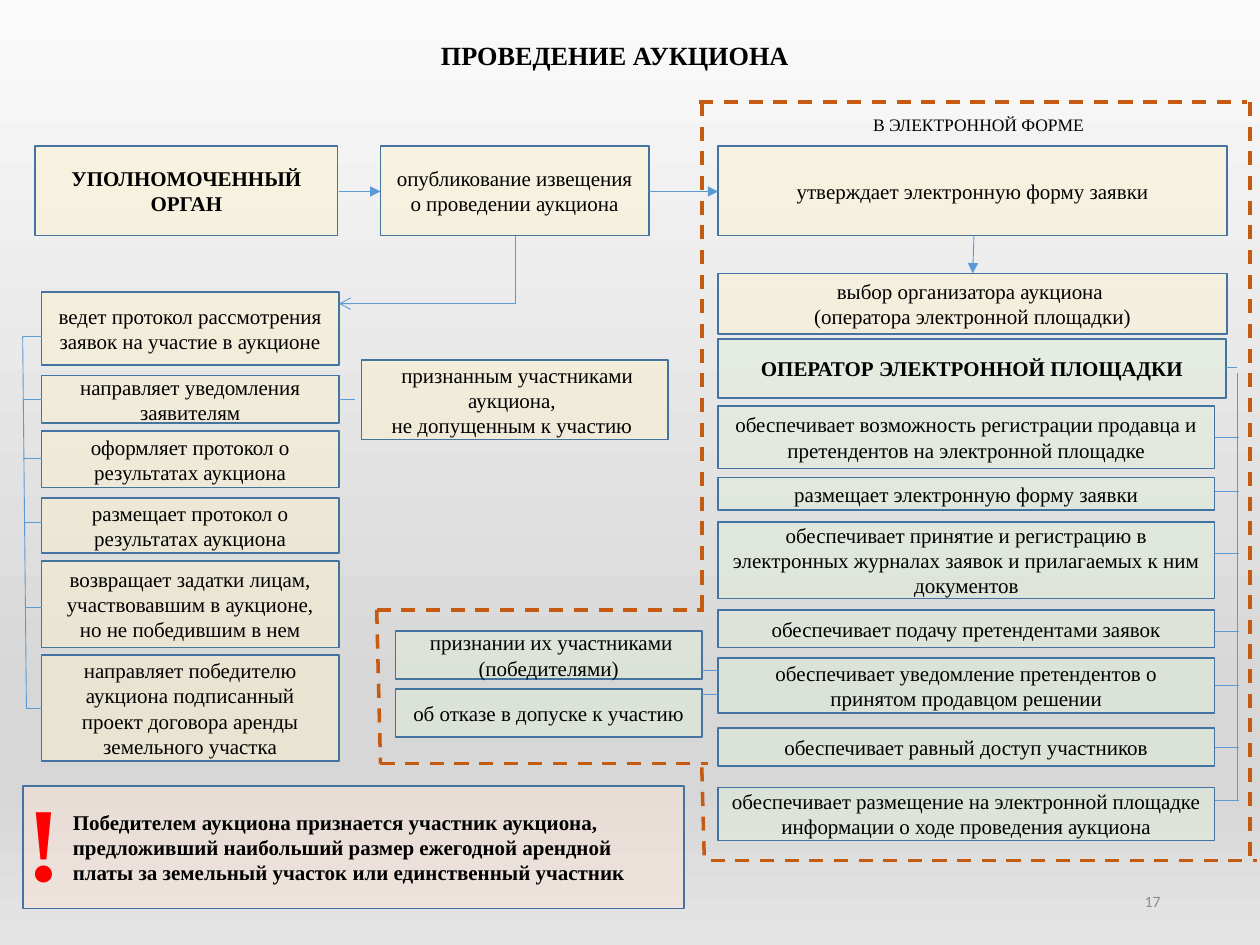
import pptx
import pptx.util
import pptx.dml.color
import pptx.enum.dml
import pptx.enum.shapes
import pptx.enum.text
import pptx.oxml.ns
import lxml.etree

RGB = pptx.dml.color.RGBColor
CREAM, GREEN, PEACH = RGB(0xFF, 0xF2, 0xCC), RGB(0xE2, 0xF0, 0xD9), RGB(0xFB, 0xE5, 0xD6)
BORDER, LINK, FRAME = RGB(0x43, 0x73, 0x9E), RGB(0x5B, 0x9B, 0xD5), RGB(0xC5, 0x5A, 0x11)
BLACK, GREY, RED = RGB(0, 0, 0), RGB(0x8C, 0x8C, 0x8C), RGB(0xFF, 0, 0)
BACKDROP = [(0, "FAFAFA"), (74, "D7D7D7"), (83, "D7D7D7"), (100, "E4E4E4")]
SERIF = "Times New Roman"
CENTER, LEFT, RIGHT = (pptx.enum.text.PP_ALIGN.CENTER, pptx.enum.text.PP_ALIGN.LEFT,
                       pptx.enum.text.PP_ALIGN.RIGHT)
MIDDLE, TOP = pptx.enum.text.MSO_ANCHOR.MIDDLE, pptx.enum.text.MSO_ANCHOR.TOP

AUTHORITY = (0.33, 2.36)
OPERATOR = (5.7, 3.94)
NOTICES = (3.14, 2.43)

HEADS = [
    ((0.28, 1.16, 2.4, 0.71), CREAM, True, "УПОЛНОМОЧЕННЫЙ ОРГАН"),
    ((3.02, 1.16, 2.13, 0.71), CREAM, False, "опубликование извещения о проведении аукциона"),
    ((5.7, 1.16, 4.04, 0.71), CREAM, False, "утверждает электронную форму заявки"),
    ((5.7, 2.17, 4.04, 0.48), CREAM, False,
     "выбор организатора аукциона \n(оператора электронной площадки)"),
    ((5.7, 2.69, 4.03, 0.47), GREEN, True, "ОПЕРАТОР ЭЛЕКТРОННОЙ ПЛОЩАДКИ"),
    ((2.87, 2.86, 2.43, 0.63), CREAM, False,
     " признанным участниками аукциона, \nне допущенным к участию "),
]
# top, height, link height, wording
AUTHORITY_STEPS = [
    (2.32, 0.58, 2.67, "ведет протокол рассмотрения заявок на участие в аукционе"),
    (2.98, 0.38, 3.17, "направляет уведомления заявителям"),
    (3.42, 0.45, 3.64, "оформляет протокол о результатах аукциона"),
    (3.95, 0.44, 4.15, "размещает протокол о результатах аукциона"),
    (4.45, 0.69, 4.82, "возвращает задатки лицам, участвовавшим в аукционе, но не победившим в нем"),
    (5.2, 0.84, 5.62, "направляет победителю аукциона подписанный проект договора аренды земельного участка"),
]
OPERATOR_STEPS = [
    (3.22, 0.5, 3.47, "обеспечивает возможность регистрации продавца и претендентов на электронной площадке"),
    (3.79, 0.26, 3.9, "размещает электронную форму заявки"),
    (4.14, 0.61, 4.39,
     "обеспечивает принятие и регистрацию в электронных журналах заявок и прилагаемых к ним документов"),
    (4.84, 0.3, 5.01, "обеспечивает подачу претендентами заявок"),
    (5.22, 0.44, 5.44, "обеспечивает уведомление претендентов о принятом продавцом решении"),
    (5.78, 0.3, 5.93, "обеспечивает равный доступ участников"),
    (6.25, 0.42, 6.35, "обеспечивает размещение на электронной площадке информации о ходе проведения аукциона"),
]
NOTICE_KINDS = [
    (5.01, 0.38, 5.32, " признании их участниками (победителями)"),
    (5.47, 0.38, 5.51, "об отказе в допуске к участию"),
]
WINNER = ("Победителем аукциона признается участник аукциона, предложивший наибольший размер "
          "ежегодной арендной платы за земельный участок или единственный участник")
FLOW = [
    ((2.69, 1.52, 3.02, 1.52), "triangle"),
    ((5.15, 1.52, 5.7, 1.52), "triangle"),
    ((7.73, 1.87, 7.72, 2.17), "triangle"),
    ((4.09, 1.87, 4.09, 2.41), None),
    ((4.09, 2.41, 2.69, 2.41), "arrow"),
    ((2.69, 3.17, 2.82, 3.17), None),
    ((9.82, 2.92, 9.73, 2.92), None),
]
ELECTRONIC_FRAME = [
    (5.57, 0.81, 5.57, 4.84), (9.92, 0.81, 9.92, 6.83), (5.55, 0.81, 9.9, 0.81),
    (5.64, 6.83, 9.98, 6.83), (5.57, 6.09, 5.59, 6.83), (2.99, 4.84, 3.02, 6.06),
    (2.99, 4.84, 5.59, 4.84), (3.02, 6.06, 5.62, 6.06),
]


def inches(values):
    return [pptx.util.Inches(value) for value in values]


def add_xml(parent, tag, **attributes):
    return lxml.etree.SubElement(parent, pptx.oxml.ns.qn(tag), attributes)


def write(frame, wording, size=12, bold=False, color=BLACK, align=CENTER,
          font=SERIF, anchor=MIDDLE, wrap=True):
    frame.word_wrap, frame.vertical_anchor = wrap, anchor
    frame.text = wording
    style = {"size": pptx.util.Pt(size), "bold": bold, "name": font}
    for paragraph in frame.paragraphs:
        paragraph.alignment = align
        for run in paragraph.runs:
            for key, value in style.items():
                setattr(run.font, key, value)
            run.font.color.rgb = color
    return frame.paragraphs[0]


def box(place, fill, wording, **style):
    panel = slide.shapes.add_shape(pptx.enum.shapes.MSO_SHAPE.RECTANGLE, *inches(place))
    panel.shadow.inherit = False
    panel.fill.solid()
    panel.fill.fore_color.rgb = fill
    tint = panel.element.spPr.find(".//" + pptx.oxml.ns.qn("a:srgbClr"))
    add_xml(tint, "a:alpha", val="45000")
    panel.line.color.rgb, panel.line.width = BORDER, pptx.util.Pt(1)
    return write(panel.text_frame, wording, **style)


def label(place, wording, **style):
    return write(slide.shapes.add_textbox(*inches(place)).text_frame, wording, **style)


def line(ends, color=LINK, width=0.5, arrow=None, dash=None):
    link = slide.shapes.add_connector(pptx.enum.shapes.MSO_CONNECTOR.STRAIGHT, *inches(ends))
    link.line.color.rgb, link.line.width = color, pptx.util.Pt(width)
    if dash:
        link.line.dash_style = dash
    if arrow:
        add_xml(link.line._get_or_add_ln(), "a:tailEnd", type=arrow)
    add_xml(link.element.spPr, "a:effectLst")


def column(steps, left, width, fill):
    for top, height, _, wording in steps:
        box((left, top, width, height), fill, wording)


deck = pptx.Presentation()
deck.slide_width, deck.slide_height = inches((10, 7.5))
slide = deck.slides.add_slide(deck.slide_layouts[6])

slide.background.fill.gradient()
gradient = slide.element.find(".//" + pptx.oxml.ns.qn("a:gradFill"))
for child in list(gradient):
    gradient.remove(child)
stops = add_xml(gradient, "a:gsLst")
for share, tone in BACKDROP:
    add_xml(add_xml(stops, "a:gs", pos=str(share * 1000)), "a:srgbClr", val=tone)
add_xml(gradient, "a:lin", ang="5400000", scaled="0")

label((7.06, 6.95, 2.25, 0.4), "17", size=9, color=GREY, align=RIGHT, font="Calibri")
label((2.4, 0.26, 4.96, 0.35), "ПРОВЕДЕНИЕ АУКЦИОНА", size=15, bold=True, anchor=TOP)
label((6.14, 0.81, 3.25, 0.35), "В ЭЛЕКТРОННОЙ ФОРМЕ", size=10)

for place, fill, bold, wording in HEADS:
    box(place, fill, wording, bold=bold)
column(AUTHORITY_STEPS, *AUTHORITY, CREAM)
column(OPERATOR_STEPS, *OPERATOR, GREEN)
column(NOTICE_KINDS, *NOTICES, GREEN)

conclusion = box((0.18, 6.24, 5.25, 0.97), PEACH, WINNER, bold=True, align=LEFT)
conclusion._p.get_or_add_pPr().set("marL", str(pptx.util.Inches(0.3)))

mark = label((0.11, 6.11, 0.48, 1.11), "!", size=60, bold=True, color=RED, anchor=TOP, wrap=False)
outline = lxml.etree.Element(pptx.oxml.ns.qn("a:ln"), w=str(pptx.util.Pt(1.75)))
add_xml(add_xml(outline, "a:solidFill"), "a:srgbClr", val=str(RED))
mark.runs[0].font._element.insert(0, outline)

first, last = AUTHORITY_STEPS[0][2], AUTHORITY_STEPS[-1][2]
line((0.18, first, 0.21, last))
for _, _, y, _ in AUTHORITY_STEPS:
    line((0.18 + 0.03 * (y - first) / (last - first), y, AUTHORITY[0], y))
line((9.82, 2.96, 9.82, OPERATOR_STEPS[-1][2]))
for _, _, y, _ in OPERATOR_STEPS:
    line((sum(OPERATOR), y, 9.83, y))
for _, _, y, _ in NOTICE_KINDS:
    line((sum(NOTICES), y, OPERATOR[0], y))
for ends, arrow in FLOW:
    line(ends, arrow=arrow)
for ends in ELECTRONIC_FRAME:
    line(ends, FRAME, 2, dash=pptx.enum.dml.MSO_LINE.DASH)

deck.save("out.pptx")
